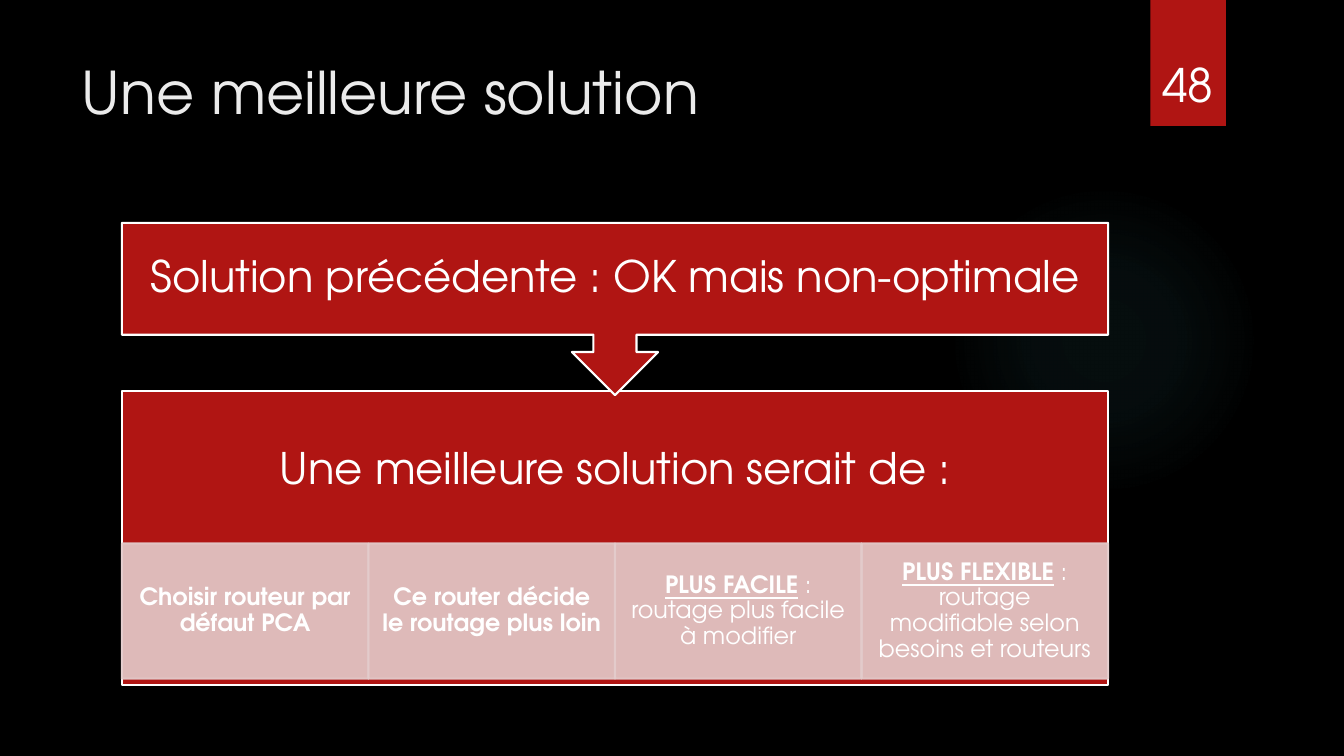
import pptx
import pptx.util
import pptx.dml.color
import pptx.enum.shapes
import pptx.enum.text
import pptx.oxml
import pptx.oxml.ns

Pt = pptx.util.Pt
MSO = pptx.enum.shapes.MSO_SHAPE
ANCHOR = pptx.enum.text.MSO_ANCHOR
ALIGN = pptx.enum.text.PP_ALIGN
RED, WHITE, PINK, GLOW = "B01513", "FFFFFF", "E4CCCC", "50B9C1"


def rgb(value):
    return pptx.dml.color.RGBColor.from_string(value)


class Deck:
    font = "TeX Gyre Adventor"

    def __init__(self, width, height, background):
        self.prs = pptx.Presentation()
        self.prs.slide_width, self.prs.slide_height = Pt(width), Pt(height)
        self.s = self.prs.slides.add_slide(self.prs.slide_layouts[6])
        fill = self.s.background.fill
        fill.solid()
        fill.fore_color.rgb = rgb(background)

    def label(self, sp, runs, size, color=WHITE, margins=(7.2, 3.6, 7.2, 3.6), **formats):
        """Fill a shape with one paragraph of (text, font formats) runs."""
        tf = sp.text_frame
        tf.word_wrap = True
        tf.vertical_anchor = formats.pop("anchor", ANCHOR.TOP)
        for side, margin in zip(("left", "top", "right", "bottom"), margins):
            setattr(tf, f"margin_{side}", Pt(margin))
        p = tf.paragraphs[0]
        for name, value in formats.items():
            setattr(p, name, value)
        for text, font_formats in runs:
            r = p.add_run()
            r.text = text
            r.font.color.rgb = rgb(color)
            for name, value in {"name": self.font, "size": Pt(size), **font_formats}.items():
                setattr(r.font, name, value)

    def text(self, x, y, w, h, text, size, color=WHITE):
        sp = self.s.shapes.add_textbox(Pt(x), Pt(y), Pt(w), Pt(h))
        self.label(sp, [(text, {})], size, color)

    def shape(self, kind, x, y, w, h, fill, line=None, opacity=100):
        sp = self.s.shapes.add_shape(kind, Pt(x), Pt(y), Pt(w), Pt(h))
        sp.shadow.inherit = False
        sp.fill.solid()
        sp.fill.fore_color.rgb = rgb(fill)
        if line:
            sp.line.color.rgb = rgb(line)
            sp.line.width = Pt(1.5)
        else:
            sp.line.fill.background()
        if opacity < 100:
            for color in sp._element.spPr.iter(pptx.oxml.ns.qn("a:srgbClr")):
                alpha = pptx.oxml.parse_xml(
                    f'<a:alpha {pptx.oxml.ns.nsdecls("a")} val="{opacity * 1000}"/>')
                color.append(alpha)
        return sp

    def glow(self, x, y, size, color, stops):
        """Draw a circle that fades outwards through (position, opacity) stops."""
        sp = self.shape(MSO.OVAL, x, y, size, size, color)
        steps = "".join(
            f'<a:gs pos="{pos * 1000}"><a:srgbClr val="{color}">'
            f'<a:alpha val="{opacity * 1000}"/></a:srgbClr></a:gs>'
            for pos, opacity in stops)
        grad = pptx.oxml.parse_xml(
            f'<a:gradFill {pptx.oxml.ns.nsdecls("a")}><a:gsLst>{steps}</a:gsLst>'
            '<a:path path="circle"><a:fillToRect l="50000" t="50000" r="50000" b="50000"/>'
            '</a:path></a:gradFill>')
        spPr = sp._element.spPr
        spPr.replace(spPr.find(pptx.oxml.ns.qn("a:solidFill")), grad)


def main():
    deck = Deck(960, 540, "000000")
    deck.glow(677.5, 131.8, 221.8, GLOW, [(0, 7), (36, 6), (69, 0)])
    deck.shape(MSO.RECTANGLE, 821.7, 0, 54, 90, RED)
    deck.text(51, 36, 741, 110, "Une meilleure solution", 42, "EBEBEB")

    left, width = 87.1, 704.4
    centred = {"anchor": ANCHOR.MIDDLE, "alignment": ALIGN.CENTER, "line_spacing": 0.9}

    panel = deck.shape(MSO.RECTANGLE, left, 279.4, width, 210, RED, WHITE)
    deck.label(panel, [("Une meilleure solution serait de :", {})], 31,
               margins=(17, 17, 17, 114), **centred)

    bold, underlined = {"bold": True}, {"bold": True, "underline": True}
    advantages = [
        [("Choisir routeur par défaut PCA", bold)],
        [("Ce router décide le routage plus loin", bold)],
        [("PLUS FACILE", underlined), (" : routage plus facile à modifier", {})],
        [("PLUS FLEXIBLE", underlined),
         (" : routage modifiable selon besoins et routeurs", {})],
    ]
    cell_width = width / len(advantages)
    for i, runs in enumerate(advantages):
        cell = deck.shape(MSO.RECTANGLE, left + i * cell_width, 388.2, cell_width, 96.6,
                          PINK, PINK, opacity=90)
        deck.label(cell, runs, 17, margins=(9.4, 1.4, 9.4, 1.4), **centred)

    callout = deck.shape(MSO.DOWN_ARROW_CALLOUT, left, 159.2, width, 123, RED, WHITE)
    deck.label(callout, [("Solution précédente : OK mais non-optimale", {})], 31,
               margins=(17, 17, 17, 17), **centred)

    deck.text(823, 36.7, 56, 47.5, "48", 33)
    deck.prs.save("out.pptx")


if __name__ == "__main__":
    main()
